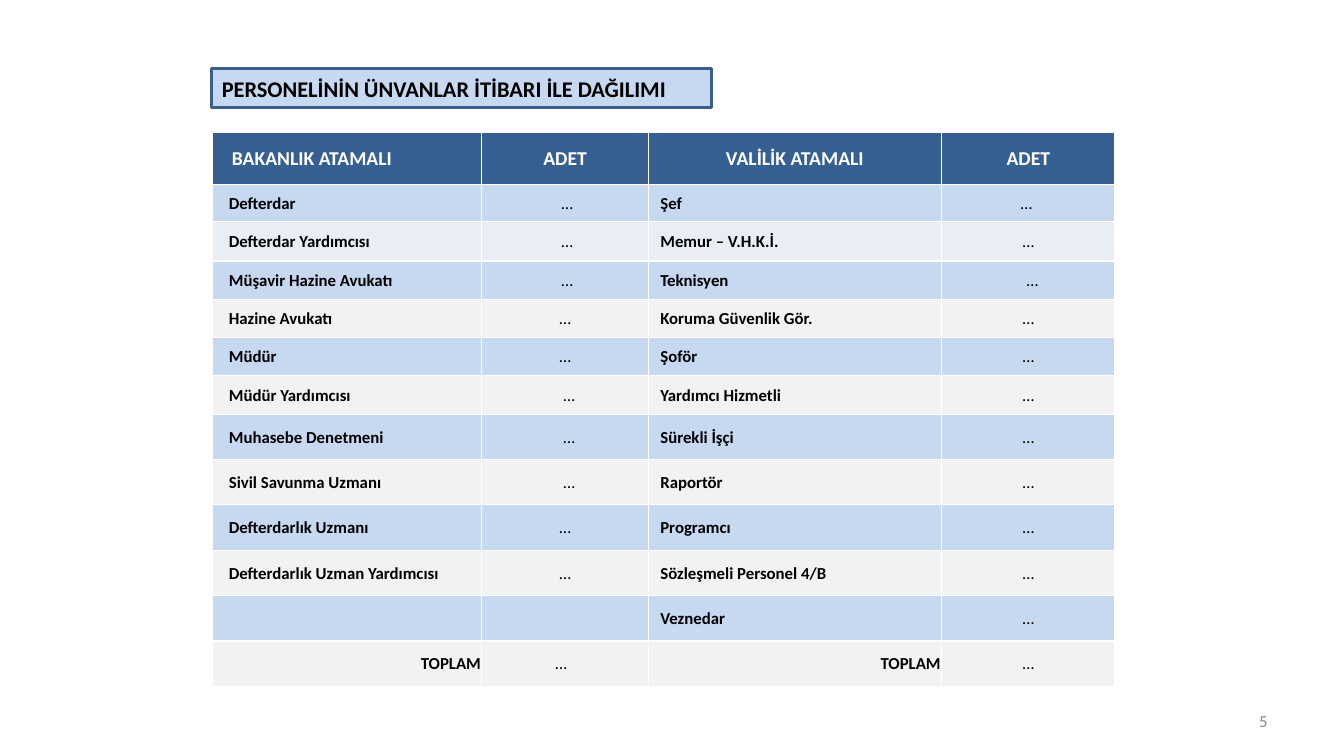
import pptx
import pptx.dml.color
import pptx.enum.text
import pptx.oxml
import pptx.oxml.ns
import pptx.util
from pptx.util import Inches

ALIGN = pptx.enum.text.PP_ALIGN
MIDDLE = pptx.enum.text.MSO_ANCHOR.MIDDLE
DOTS = "…"

# Ministry title, sideways shift of its count, governorship title, shift of its count
STAFF = [
    ("Defterdar", 1, "Şef", -1),
    ("Defterdar Yardımcısı", 1, "Memur – V.H.K.İ.", 0),
    ("Müşavir Hazine Avukatı", 1, "Teknisyen", 2),
    ("Hazine Avukatı", 0, "Koruma Güvenlik Gör.", 0),
    ("Müdür", 0, "Şoför", 0),
    ("Müdür Yardımcısı", 2, "Yardımcı Hizmetli", 0),
    ("Muhasebe Denetmeni", 2, "Sürekli İşçi", 0),
    ("Sivil Savunma Uzmanı", 2, "Raportör", 0),
    ("Defterdarlık Uzmanı", 0, "Programcı", 0),
    ("Defterdarlık Uzman Yardımcısı", 0, "Sözleşmeli Personel 4/B", 0),
    ("", None, "Veznedar", 0),
    ("TOPLAM", -2, "TOPLAM", 0),
]
HEADERS = ["BAKANLIK ATAMALI", "ADET", "VALİLİK ATAMALI", "ADET"]
COLUMN_WIDTHS = [2.67, 1.65, 2.91, 1.72]
ROW_HEIGHTS = [0.52, 0.37, 0.39] + [0.38] * 4 + [0.45] * 6
TITLE_INDENTS = {0: 0.16, 2: 0.12}


def color(hex_string):
    return pptx.dml.color.RGBColor.from_string(hex_string)


class StaffSlide:
    FONT = "Calibri"
    BLACK, WHITE, GRAY = "000000", "FFFFFF", "898989"
    NAVY, OUTLINE, BLUE = "376092", "3A5F8C", "C6D9F1"
    PALE, LIGHT = "E9EDF4", "F2F2F2"

    def __init__(self, presentation):
        self.slide = presentation.slides.add_slide(presentation.slide_layouts[5])

    def set_text(self, text_frame, text, size, text_color, bold=False, align=ALIGN.LEFT):
        text_frame.text = text
        paragraph = text_frame.paragraphs[0]
        paragraph.alignment = align
        for run in paragraph.runs:
            run.font.name = self.FONT
            run.font.size = pptx.util.Pt(size)
            run.font.bold = bold
            run.font.color.rgb = color(text_color)

    def title(self, text, left, top, width, height):
        """Turn the title placeholder into an outlined rounded box."""
        shape = self.slide.shapes.title
        shape.left, shape.top = Inches(left), Inches(top)
        shape.width, shape.height = Inches(width), Inches(height)
        geometry = pptx.oxml.parse_xml(
            f'<a:prstGeom {pptx.oxml.ns.nsdecls("a")} prst="roundRect"><a:avLst/></a:prstGeom>')
        shape.element.spPr.insert(1, geometry)
        shape.fill.solid()
        shape.fill.fore_color.rgb = color(self.BLUE)
        shape.line.color.rgb = color(self.OUTLINE)
        shape.line.width = pptx.util.Pt(2)
        shape.text_frame.vertical_anchor = MIDDLE
        shape.text_frame.auto_size = pptx.enum.text.MSO_AUTO_SIZE.NONE
        self.set_text(shape.text_frame, text, 16, self.BLACK, bold=True)

    def page_number(self, text, left, top, width, height):
        box = self.slide.shapes.add_textbox(
            Inches(left), Inches(top), Inches(width), Inches(height))
        box.text_frame.word_wrap = True
        box.text_frame.vertical_anchor = MIDDLE
        self.set_text(box.text_frame, text, 12, self.GRAY, align=ALIGN.RIGHT)

    def borders(self, cell):
        properties = cell._tc.get_or_add_tcPr()
        for position, side in enumerate(("lnL", "lnR", "lnT", "lnB")):
            properties.insert(position, pptx.oxml.parse_xml(
                f'<a:{side} {pptx.oxml.ns.nsdecls("a")} w="12700"><a:solidFill>'
                f'<a:srgbClr val="{self.WHITE}"/></a:solidFill></a:{side}>'))

    def cell(self, cell, fill, text, size=12, text_color=BLACK, bold=False,
             align=ALIGN.LEFT, indent=0.01, right=0.01):
        cell.fill.solid()
        cell.fill.fore_color.rgb = color(fill)
        self.borders(cell)
        cell.vertical_anchor = MIDDLE
        cell.margin_left, cell.margin_right = Inches(indent), Inches(right)
        cell.margin_top, cell.margin_bottom = Inches(0.01), 0
        self.set_text(cell.text_frame, text, size, text_color, bold, align)

    def count(self, cell, fill, shift):
        """Centre the dots, moved right (or left if negative) by uneven margins."""
        self.cell(cell, fill, "" if shift is None else DOTS, align=ALIGN.CENTER,
                  indent=0.01 + 0.04 * max(shift or 0, 0),
                  right=0.01 + 0.04 * max(-(shift or 0), 0))

    def row_fill(self, row):
        if row % 2:
            return self.BLUE
        return self.PALE if row == 2 else self.LIGHT

    def staff_table(self, left, top):
        table = self.slide.shapes.add_table(
            len(ROW_HEIGHTS), len(COLUMN_WIDTHS), Inches(left), Inches(top),
            Inches(sum(COLUMN_WIDTHS)), Inches(sum(ROW_HEIGHTS))).table
        table.horz_banding = False
        for column, width in zip(table.columns, COLUMN_WIDTHS):
            column.width = Inches(width)
        for row, height in zip(table.rows, ROW_HEIGHTS):
            row.height = Inches(height)

        for column, header in enumerate(HEADERS):
            first = column == 0
            self.cell(table.cell(0, column), self.NAVY, header, 14, self.WHITE, True,
                      ALIGN.LEFT if first else ALIGN.CENTER, 0.19 if first else 0.01)

        for row, entry in enumerate(STAFF, start=1):
            fill = self.row_fill(row)
            for column, indent in TITLE_INDENTS.items():
                name, shift = entry[column:column + 2]
                total = name == "TOPLAM"
                self.cell(table.cell(row, column), fill, name, bold=True,
                          align=ALIGN.RIGHT if total else ALIGN.LEFT,
                          indent=0.01 if total else indent)
                self.count(table.cell(row, column + 1), fill, shift)


def main():
    presentation = pptx.Presentation()
    presentation.slide_width = Inches(13.33)
    presentation.slide_height = Inches(7.5)
    page = StaffSlide(presentation)
    page.staff_table(2.11, 1.31)
    page.title("PERSONELİNİN ÜNVANLAR İTİBARI İLE DAĞILIMI", 2.1, 0.68, 4.96, 0.39)
    page.page_number("5", 9.56, 6.95, 3.11, 0.4)
    presentation.save("out.pptx")


if __name__ == "__main__":
    main()
